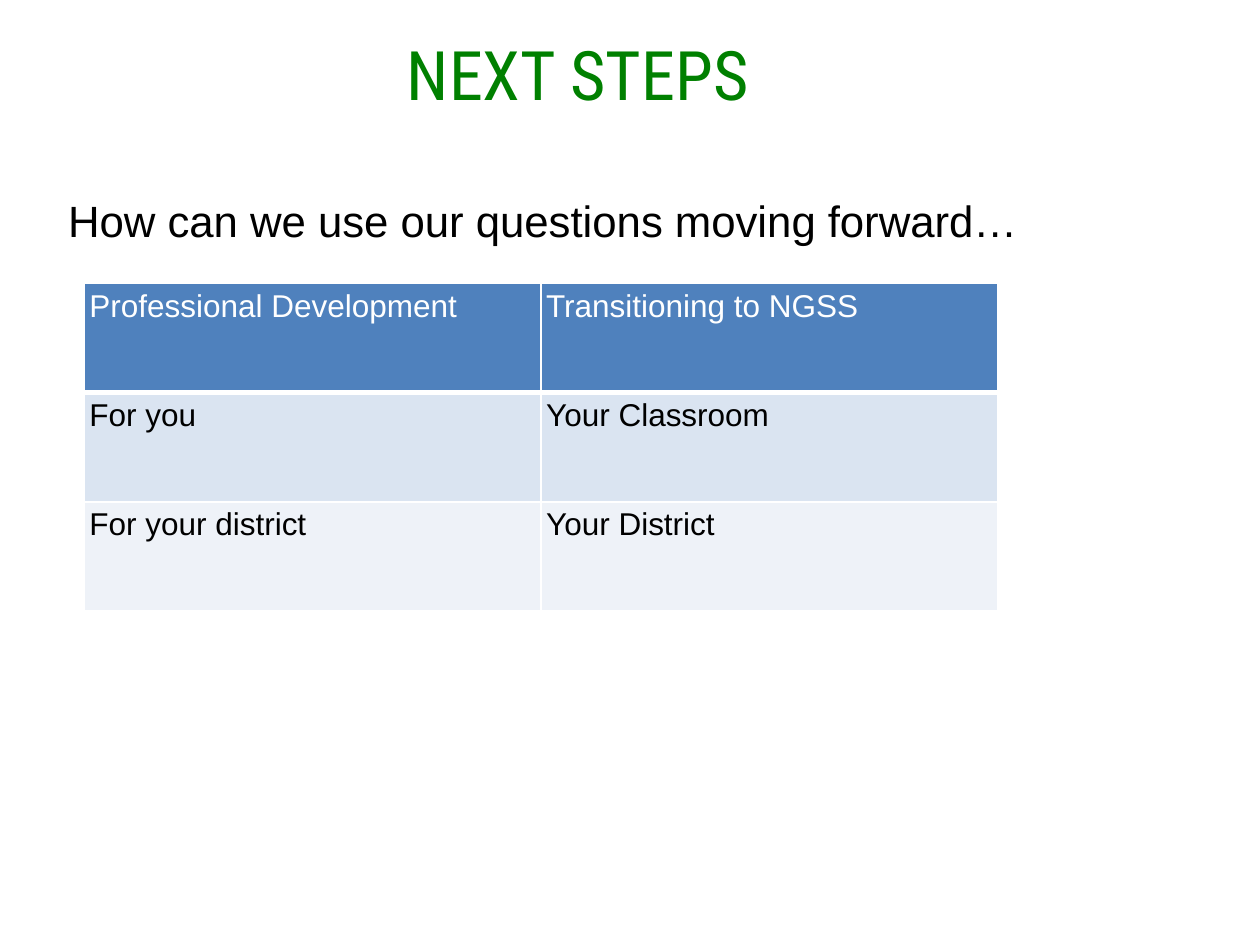
from dataclasses import dataclass

from lxml import etree
from pptx import Presentation
from pptx.dml.color import RGBColor
from pptx.enum.text import MSO_ANCHOR, MSO_AUTO_SIZE, PP_ALIGN
from pptx.oxml.ns import qn
from pptx.util import Inches, Pt

CENTER, LEFT = PP_ALIGN.CENTER, PP_ALIGN.LEFT
MIDDLE, TOP = MSO_ANCHOR.MIDDLE, MSO_ANCHOR.TOP
NO_AUTOFIT = MSO_AUTO_SIZE.NONE
TITLE_ONLY = 5
INSET = Inches(0.04)
WHITE, BLACK, GREEN = "FFFFFF", "000000", "008000"


@dataclass
class TextStyle:
    size: float
    color: str
    font: str = "Arial"
    align: PP_ALIGN = LEFT


@dataclass
class TableRow:
    texts: tuple[str, ...]
    fill: str
    color: str
    top_border: float = 1
    bottom_border: float = 1


ROWS = [
    TableRow(("Professional Development", "Transitioning to NGSS"),
             "4F81BD", WHITE, bottom_border=3),
    TableRow(("For you", "Your Classroom"), "DAE4F1", BLACK, top_border=3),
    TableRow(("For your district", "Your District"), "EEF2F8", BLACK),
]


def rgb(color: str) -> RGBColor:
    return RGBColor.from_string(color)


def write_text(text_frame, text: str, style: TextStyle) -> None:
    text_frame.text = text
    paragraph = text_frame.paragraphs[0]
    paragraph.alignment = style.align
    paragraph.font.name = style.font
    paragraph.font.size = Pt(style.size)
    paragraph.font.color.rgb = rgb(style.color)


def set_margins(target) -> None:
    """Give a text frame or a table cell the same inset on every side."""
    target.margin_left = target.margin_right = INSET
    target.margin_top = target.margin_bottom = INSET


def format_frame(text_frame, anchor: MSO_ANCHOR) -> None:
    set_margins(text_frame)
    text_frame.word_wrap = True
    text_frame.auto_size = NO_AUTOFIT
    text_frame.vertical_anchor = anchor


def set_borders(cell, top: float, bottom: float) -> None:
    properties = cell._tc.get_or_add_tcPr()
    widths = {"a:lnL": 1, "a:lnR": 1, "a:lnT": top, "a:lnB": bottom}
    for index, (tag, width) in enumerate(widths.items()):
        line = etree.Element(qn(tag), w=str(Pt(width)))
        fill = etree.SubElement(line, qn("a:solidFill"))
        etree.SubElement(fill, qn("a:srgbClr"), val=WHITE)
        properties.insert(index, line)


def add_title(slide, text: str) -> None:
    title = slide.shapes.title
    title.left, title.top = Inches(0.5), Inches(0.29)
    title.width, title.height = Inches(8.17), Inches(0.58)
    format_frame(title.text_frame, MIDDLE)
    write_text(title.text_frame, text,
               TextStyle(39, GREEN, "Roboto Condensed", CENTER))


def add_question(slide, text: str) -> None:
    box = slide.shapes.add_textbox(Inches(0.5), Inches(1.5),
                                   Inches(8.67), Inches(4.83))
    format_frame(box.text_frame, TOP)
    write_text(box.text_frame, text, TextStyle(25, BLACK))
    box.text_frame.paragraphs[0].space_before = Pt(3)


def add_steps_table(slide, rows: list[TableRow]) -> None:
    frame = slide.shapes.add_table(len(rows), len(rows[0].texts),
                                   Inches(0.67), Inches(2.25),
                                   Inches(7.25), Inches(2.6))
    for row_index, row in enumerate(rows):
        for column_index, text in enumerate(row.texts):
            cell = frame.table.cell(row_index, column_index)
            set_margins(cell)
            write_text(cell.text_frame, text, TextStyle(18, row.color))
            cell.text_frame.paragraphs[0].font.bold = False
            cell.fill.solid()
            cell.fill.fore_color.rgb = rgb(row.fill)
            set_borders(cell, row.top_border, row.bottom_border)


def main() -> None:
    presentation = Presentation()
    presentation.slide_width = Inches(10)
    presentation.slide_height = Inches(7.5)
    slide = presentation.slides.add_slide(
        presentation.slide_layouts[TITLE_ONLY])

    # Heading and leading question
    add_question(slide, "How can we use our questions moving forward…")
    add_title(slide, "NEXT STEPS")

    # Next steps by audience
    add_steps_table(slide, ROWS)
    presentation.save("out.pptx")


if __name__ == "__main__":
    main()
